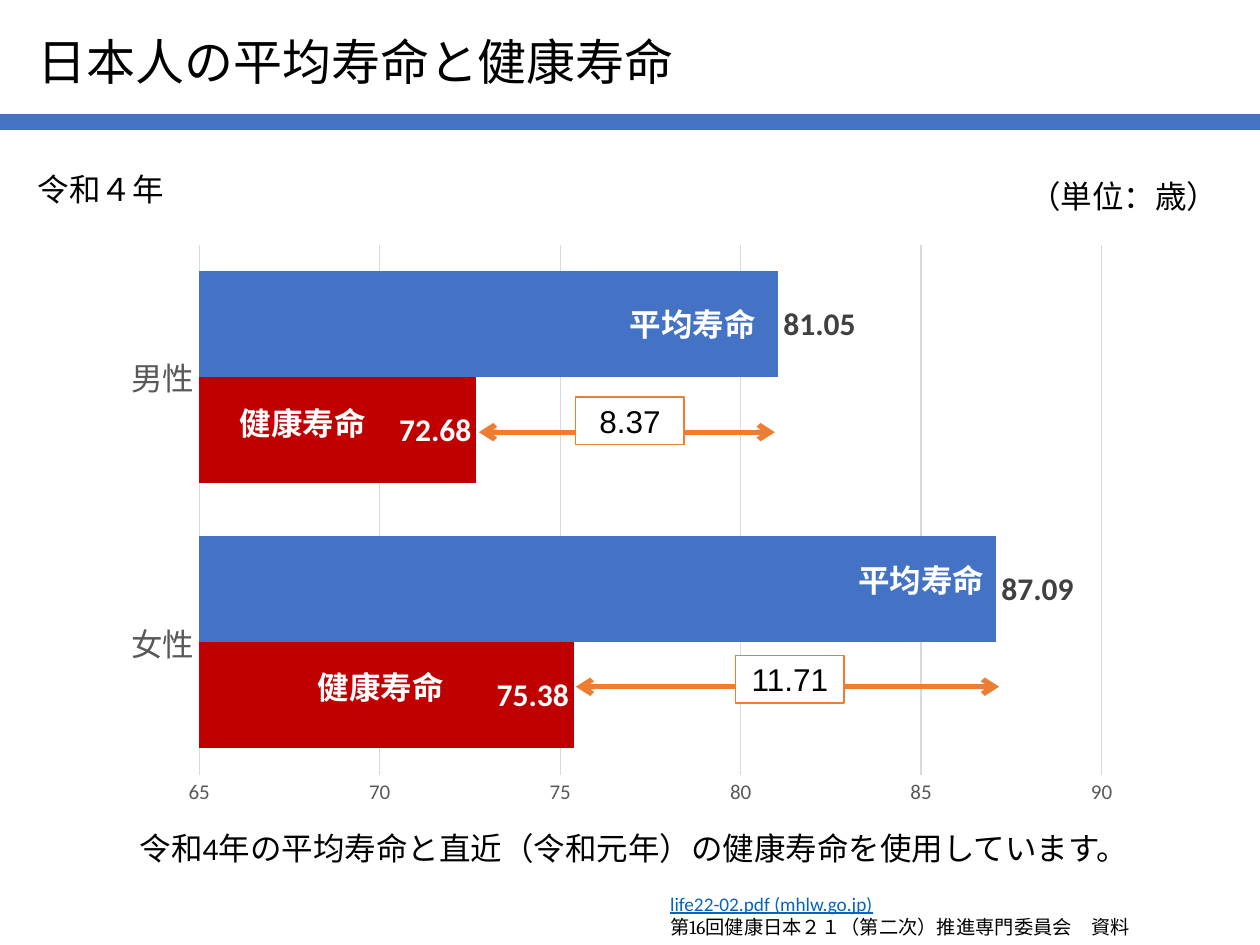
from pptx import Presentation
from pptx.chart.data import CategoryChartData
from pptx.dml.color import RGBColor
from pptx.enum.chart import XL_CHART_TYPE, XL_LABEL_POSITION, XL_TICK_MARK
from pptx.enum.shapes import MSO_CONNECTOR, MSO_SHAPE
from pptx.enum.text import MSO_ANCHOR, PP_ALIGN
from pptx.oxml.ns import qn
from pptx.util import Inches, Pt
from lxml.etree import SubElement

COLORS = {
    "text": "000000", "white": "FFFFFF", "link": "0563C1",
    "average": "4472C4", "healthy": "C00000", "gap": "ED7D31",
    "grid": "D9D9D9", "axis": "595959", "value": "404040",
}

# Content: texts are (wording, box, size, colour, bold, alignment)
GENDERS = ["女性", "男性"]
SERIES = [
    ("健康寿命", [75.38, 72.68], "healthy", "white", XL_LABEL_POSITION.INSIDE_END),
    ("平均寿命", [87.09, 81.05], "average", "value", XL_LABEL_POSITION.OUTSIDE_END),
]
LEFT, CENTER, RIGHT = PP_ALIGN.LEFT, PP_ALIGN.CENTER, PP_ALIGN.RIGHT
TEXTS = [
    ("日本人の平均寿命と健康寿命", (0.2, 0.2, 5.61, 0.57), 28, "text", False, LEFT),
    ("令和４年", (0.2, 1.3, 1.33, 0.4), 18, "text", False, LEFT),
    ("（単位：歳）", (8.07, 1.36, 1.73, 0.4), 18, "text", False, LEFT),
    ("平均寿命", (4.83, 2.37, 1.34, 0.4), 18, "white", True, CENTER),
    ("健康寿命", (1.76, 3.16, 1.24, 0.4), 18, "white", True, RIGHT),
    ("平均寿命", (6.64, 4.4, 1.34, 0.4), 18, "white", True, CENTER),
    ("健康寿命", (2.38, 5.25, 1.24, 0.4), 18, "white", True, RIGHT),
    ("令和4年の平均寿命と直近（令和元年）の健康寿命を使用しています。",
     (1.01, 6.53, 9.2, 0.4), 18, "text", False, LEFT),
]
SOURCE_BOX = (5.22, 7.03, 4.92, 0.47)
SOURCE_LINES = [
    ("life22-02.pdf (mhlw.go.jp)", "Calibri", "link", True),
    ("第16回健康日本２１（第二次）推進専門委員会　資料", "Cambria", "text", False),
]
# Gaps: label, arrow start, arrow end, arrow height, label left and top
GAPS = [("8.37", 3.8, 6.15, 3.43, 4.57, 3.15), ("11.71", 4.57, 7.93, 5.45, 5.84, 5.2)]
GAP_LABEL_SIZE = (0.86, 0.38)


def rgb(name):
    return RGBColor.from_string(COLORS[name])


def style_font(font, size, color, bold=False, name="Calibri"):
    font.size, font.bold, font.name = Pt(size), bold, name
    font.color.rgb = rgb(color)


def add_box(slide, box):
    frame = slide.shapes.add_textbox(*map(Inches, box)).text_frame
    frame.word_wrap = True
    return frame


def add_rule(slide, start, end, y, color, width, arrows=False):
    rule = slide.shapes.add_connector(
        MSO_CONNECTOR.STRAIGHT, Inches(start), Inches(y), Inches(end), Inches(y))
    rule.line.color.rgb = rgb(color)
    rule.line.width = Pt(width)
    if arrows:
        line_xml = rule.line._get_or_add_ln()
        for tag in ("a:headEnd", "a:tailEnd"):
            SubElement(line_xml, qn(tag), type="arrow")
    SubElement(rule._element.spPr, qn("a:effectLst"))


def add_life_chart(slide):
    data = CategoryChartData()
    data.categories = GENDERS
    for name, values, *_ in SERIES:
        data.add_series(name, values)
    chart = slide.shapes.add_chart(
        XL_CHART_TYPE.BAR_CLUSTERED, *map(Inches, (0.88, 1.85, 8.11, 4.63)), data).chart
    chart.has_legend = chart.has_title = False
    style_font(chart.font, 10, "text")

    plot = chart.plots[0]
    plot.gap_width, plot.overlap, plot.vary_by_categories = 50, 0, False
    for series, (_, _, fill, label_color, position) in zip(plot.series, SERIES):
        series.format.fill.solid()
        series.format.fill.fore_color.rgb = rgb(fill)
        labels = series.data_labels
        labels.show_value = True
        labels.position = position
        style_font(labels.font, 18, label_color, True)

    genders, years = chart.category_axis, chart.value_axis
    for axis, size in ((genders, 18), (years, 12)):
        axis.major_tick_mark = axis.minor_tick_mark = XL_TICK_MARK.NONE
        style_font(axis.tick_labels.font, size, "axis")
    years.minimum_scale, years.maximum_scale, years.major_unit = 65, 90, 5
    years.format.line.fill.background()
    for line in (genders.format.line, years.major_gridlines.format.line):
        line.color.rgb = rgb("grid")
        line.width = Pt(0.75)


def add_gap(slide, label, start, end, y, left, top):
    add_rule(slide, start, end, y, "gap", 3, arrows=True)
    tag = slide.shapes.add_shape(
        MSO_SHAPE.RECTANGLE, *map(Inches, (left, top, *GAP_LABEL_SIZE)))
    tag.shadow.inherit = False
    tag.fill.solid()
    tag.fill.fore_color.rgb = rgb("white")
    tag.line.color.rgb = rgb("gap")
    tag.line.width = Pt(0.75)
    frame = tag.text_frame
    frame.margin_left = frame.margin_right = Inches(0.07)
    frame.margin_top = frame.margin_bottom = Inches(0.04)
    frame.vertical_anchor = MSO_ANCHOR.TOP
    frame.text = label
    frame.paragraphs[0].alignment = CENTER
    style_font(frame.paragraphs[0].runs[0].font, 18, "text", name="Arial")


def main():
    deck = Presentation()
    deck.slide_width, deck.slide_height = Inches(10), Inches(7.5)
    slide = deck.slides.add_slide(deck.slide_layouts[6])

    # Chart and title rule
    add_life_chart(slide)
    add_rule(slide, 0, 10, 0.97, "average", 9)

    # Differences between the two life expectancies
    for gap in GAPS:
        add_gap(slide, *gap)

    # Title, bar names and notes
    for wording, box, size, color, bold, alignment in TEXTS:
        frame = add_box(slide, box)
        frame.text = wording
        frame.paragraphs[0].alignment = alignment
        style_font(frame.paragraphs[0].runs[0].font, size, color, bold)

    # Source
    frame = add_box(slide, SOURCE_BOX)
    frame.text = "\n".join(line[0] for line in SOURCE_LINES)
    for paragraph, (_, font_name, color, underline) in zip(frame.paragraphs, SOURCE_LINES):
        paragraph.alignment = PP_ALIGN.JUSTIFY
        font = paragraph.runs[0].font
        style_font(font, 11, color, name=font_name)
        font.underline = underline

    deck.save("out.pptx")


if __name__ == "__main__":
    main()
